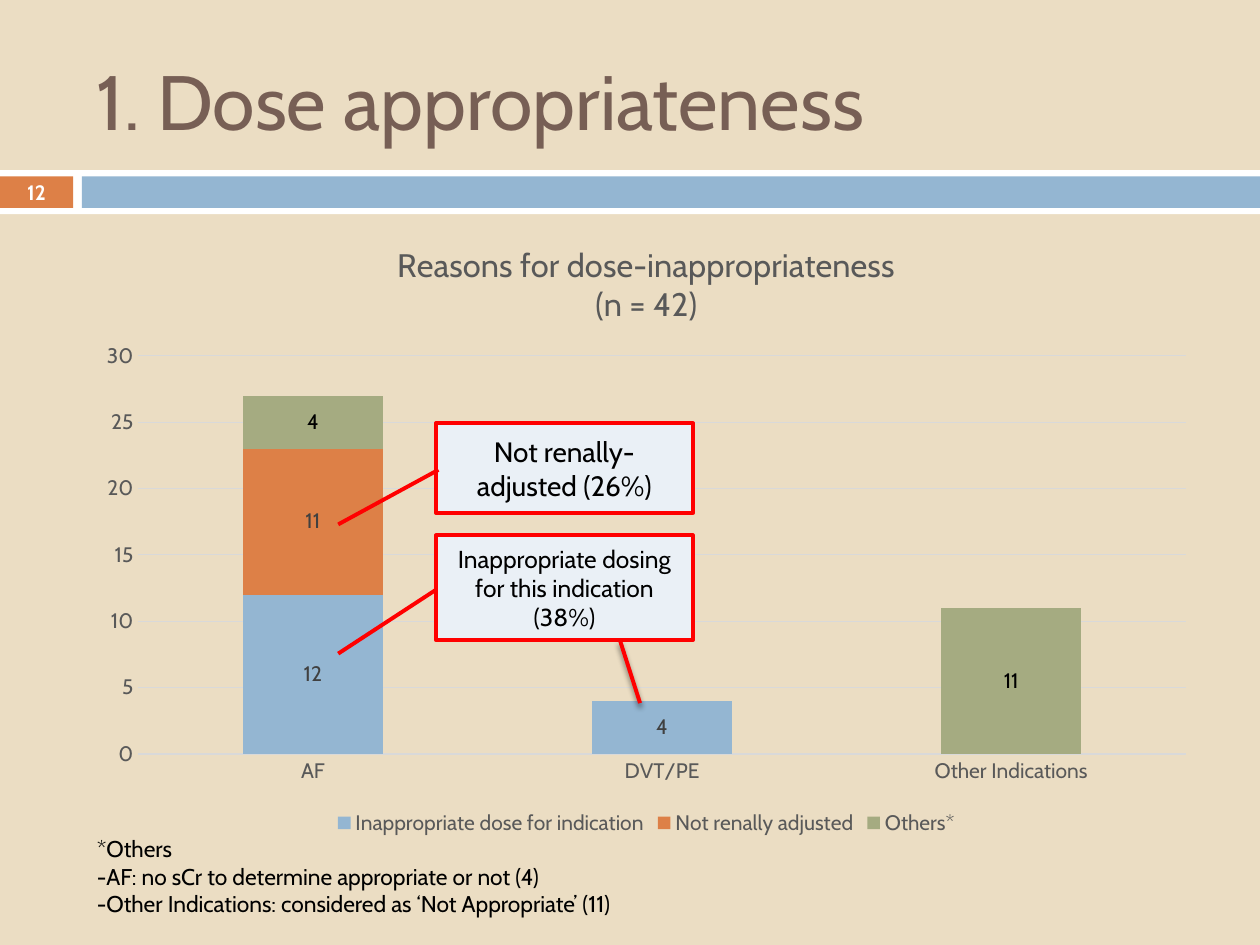
"""Build the dose appropriateness slide with a stacked column chart and callouts."""
from lxml import etree
from pptx import Presentation
from pptx.chart.data import CategoryChartData
from pptx.dml.color import RGBColor
from pptx.enum.chart import XL_CHART_TYPE, XL_LEGEND_POSITION, XL_TICK_MARK
from pptx.enum.shapes import MSO_CONNECTOR, MSO_SHAPE
from pptx.enum.text import MSO_ANCHOR, PP_ALIGN
from pptx.oxml.ns import qn
from pptx.util import Inches, Pt

STACKED = XL_CHART_TYPE.COLUMN_STACKED
BOTTOM = XL_LEGEND_POSITION.BOTTOM
NO_TICK = XL_TICK_MARK.NONE
STRAIGHT = MSO_CONNECTOR.STRAIGHT
RECTANGLE = MSO_SHAPE.RECTANGLE
CALLOUT = MSO_SHAPE.LINE_CALLOUT_1
MIDDLE, TOP = MSO_ANCHOR.MIDDLE, MSO_ANCHOR.TOP
LEFT, CENTER = PP_ALIGN.LEFT, PP_ALIGN.CENTER
FONT = "Cabin"
COLORS = {
    "sand": "EBDDC3", "white": "FFFFFF", "black": "000000", "brown": "775F55",
    "blue": "94B6D2", "orange": "DD8047", "green": "A5AB81", "red": "FF0000",
    "pale": "EAF0F6", "grey": "595959", "dark": "404040", "grid": "D9D9D9",
}


def style_font(font, size, color, bold=False):
    values = {"name": FONT, "size": Pt(size), "bold": bold}
    for attribute, value in values.items():
        setattr(font, attribute, value)
    font.color.rgb = RGBColor.from_string(COLORS[color])


def write_text(frame, lines, size, color, align=LEFT, anchor=MIDDLE, wrap=True, bold=False):
    frame.word_wrap = wrap
    frame.vertical_anchor = anchor
    for index, line in enumerate(lines):
        paragraph = frame.add_paragraph() if index else frame.paragraphs[0]
        paragraph.alignment = align
        run = paragraph.add_run()
        run.text = line
        style_font(run.font, size, color, bold)


presentation = Presentation()
presentation.slide_width = Inches(10)
presentation.slide_height = Inches(7.5)
slide = presentation.slides.add_slide(presentation.slide_layouts[6])
slide.background.fill.solid()
slide.background.fill.fore_color.rgb = RGBColor.from_string(COLORS["sand"])
shapes = slide.shapes

bands = [(0, 1.35, 10, 0.35, "white"), (0, 1.4, 0.58, 0.25, "orange"), (0.65, 1.4, 9.35, 0.25, "blue")]
for *box, color in bands:
    band = shapes.add_shape(RECTANGLE, *map(Inches, box))
    band.shadow.inherit = False
    band.fill.solid()
    band.fill.fore_color.rgb = RGBColor.from_string(COLORS[color])
    band.line.fill.background()

heading = shapes.add_textbox(Inches(0.67), Inches(0.25), Inches(8.92), Inches(1.08))
write_text(heading.text_frame, ["1. Dose appropriateness"], 44, "brown")
page_number = shapes.add_textbox(Inches(0), Inches(1.39), Inches(0.58), Inches(0.27))
write_text(page_number.text_frame, ["12"], 11.9, "white", CENTER, bold=True)

reasons = [
    ("Inappropriate dose for indication", (12, 4, None), "blue", "dark"),
    ("Not renally adjusted", (11, None, None), "orange", "dark"),
    ("Others*", (4, None, 11), "green", "black"),
]
dose_data = CategoryChartData()
dose_data.categories = ["AF", "DVT/PE", "Other Indications"]
for reason, counts, *_ in reasons:
    dose_data.add_series(reason, counts)
chart = shapes.add_chart(
    STACKED, Inches(0.67), Inches(1.75), Inches(8.92), Inches(4.92), dose_data
).chart
style_font(chart.font, 10, "black")
write_text(chart.chart_title.text_frame, ["Reasons for dose-inappropriateness", "(n = 42)"],
           18.6, "grey", CENTER)
chart.chart_title.include_in_layout = False
chart.has_legend = True
chart.legend.position = BOTTOM
chart.legend.include_in_layout = False
style_font(chart.legend.font, 12, "grey")

plot = chart.plots[0]
plot.gap_width = 150
plot.overlap = 100
plot.vary_by_categories = False
for series, (_, _, color, label_color) in zip(plot.series, reasons):
    series.format.fill.solid()
    series.format.fill.fore_color.rgb = RGBColor.from_string(COLORS[color])
    series.data_labels.show_value = True
    style_font(series.data_labels.font, 12, label_color)

indications, counts_axis = chart.category_axis, chart.value_axis
for axis in (indications, counts_axis):
    axis.major_tick_mark = NO_TICK
    axis.minor_tick_mark = NO_TICK
    style_font(axis.tick_labels.font, 12, "grey")
counts_axis.minimum_scale = 0
counts_axis.maximum_scale = 30
counts_axis.major_unit = 5
counts_axis.format.line.fill.background()
for line in (indications.format.line, counts_axis.major_gridlines.format.line):
    line.color.rgb = RGBColor.from_string(COLORS["grid"])
    line.width = Pt(0.75)

footnote = shapes.add_textbox(Inches(0.67), Inches(6.58), Inches(4.27), Inches(0.76))
footnote_lines = [
    "*Others",
    "-AF: no sCr to determine appropriate or not (4)",
    "-Other Indications: considered as ‘Not Appropriate’ (11)",
]
write_text(footnote.text_frame, footnote_lines, 13, "black", anchor=TOP, wrap=False)

callouts = [
    ("Not renally-adjusted (26%)", 3.36, 0.71, 16, (0.52, 0.01, 1.13, -0.38)),
    ("Inappropriate dosing for this indication (38%)", 4.25, 0.83, 14, (0.52, 0, 1.13, -0.38)),
]
for message, top, height, size, pointer in callouts:
    callout = shapes.add_shape(CALLOUT, Inches(3.46), Inches(top), Inches(2.04), Inches(height))
    callout.shadow.inherit = False
    callout.fill.solid()
    callout.fill.fore_color.rgb = RGBColor.from_string(COLORS["pale"])
    callout.line.color.rgb = RGBColor.from_string(COLORS["red"])
    callout.line.width = Pt(2.25)
    for index, value in enumerate(pointer):
        callout.adjustments[index] = value
    write_text(callout.text_frame, [message], size, "black", CENTER)

dvt_pointer = shapes.add_connector(STRAIGHT, Inches(5.08), Inches(5.58), Inches(4.92), Inches(5.08))
dvt_pointer.line.color.rgb = RGBColor.from_string(COLORS["red"])
dvt_pointer.line.width = Pt(2.25)
effects = etree.SubElement(dvt_pointer._element.spPr, qn("a:effectLst"))
shadow = etree.SubElement(effects, qn("a:outerShdw"), blurRad=str(Pt(3)), dist=str(Pt(2.4)),
                          dir="5400000", rotWithShape="0")
shadow_color = etree.SubElement(shadow, qn("a:srgbClr"), val=COLORS["black"])
etree.SubElement(shadow_color, qn("a:alpha"), val="45000")

presentation.save("out.pptx")
